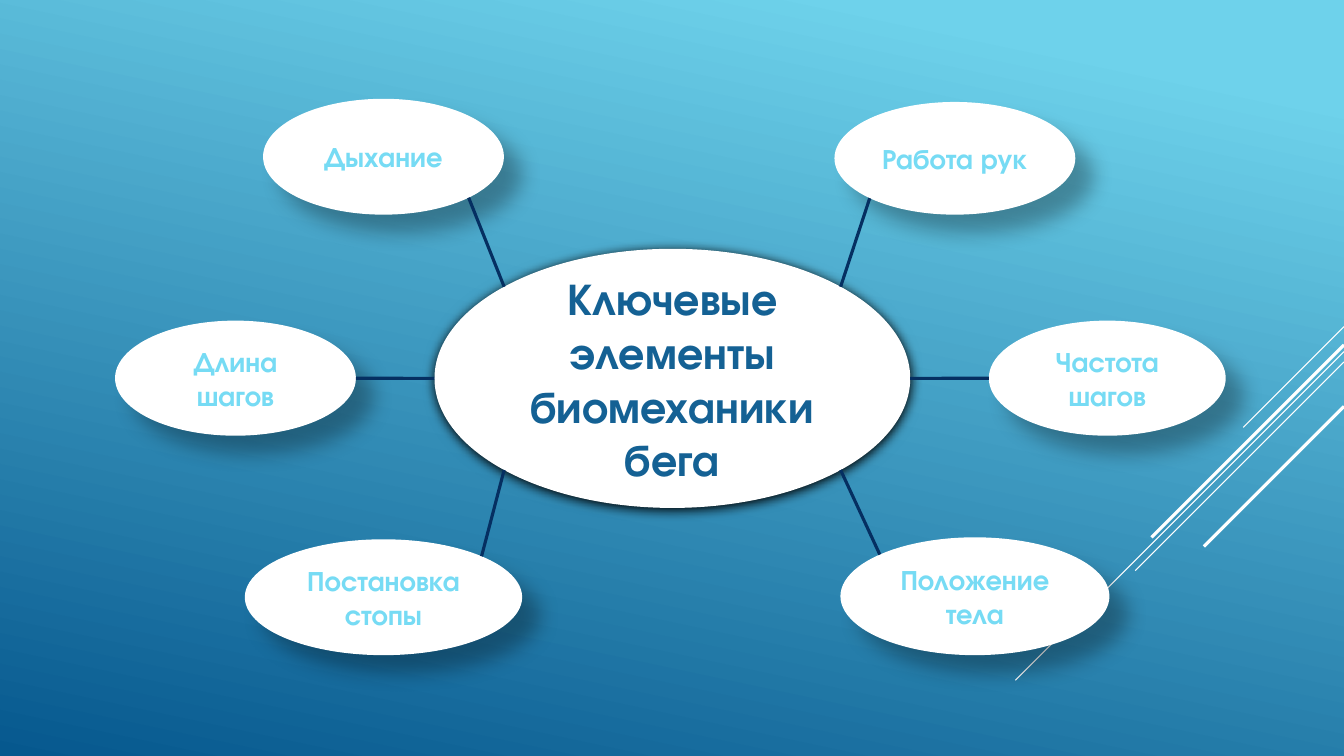
from dataclasses import dataclass
from math import cos, radians, sin

from lxml.etree import SubElement
from pptx import Presentation
from pptx.dml.color import RGBColor
from pptx.enum.shapes import MSO_CONNECTOR, MSO_SHAPE
from pptx.enum.text import MSO_ANCHOR, PP_ALIGN
from pptx.oxml.ns import qn
from pptx.util import Cm, Pt


@dataclass(frozen=True)
class Theme:
    """Colours, font and type sizes of the slide."""
    sky: str = "6ED2EB"
    deep: str = "06588E"
    white: str = "FFFFFF"
    black: str = "000000"
    navy: str = "052F61"
    title: str = "146194"
    label: str = "76DBF4"
    font: str = "TeX Gyre Adventor"
    large: int = 32
    small: int = 20
    thin: float = 0.75
    thick: float = 2.25


@dataclass(frozen=True)
class Style:
    """Type and shadow of one kind of oval."""
    size: int
    color: str
    alpha: int
    blur: float
    dist: float
    angle: int


THEME = Theme()
HUB = Style(THEME.large, THEME.title, 100, 8.5, 1, 90)
NODE = Style(THEME.small, THEME.label, 30, 15, 18, 45)
WIDTH, HEIGHT = 33.87, 19.05

STRIPES = [
    (8.23, 2.54, THEME.thin),
    (8.86, 8.28, THEME.thin),
    (9.12, 5.26, THEME.thin),
    (8.69, 4.85, THEME.thick),
    (10.24, 3.53, THEME.thick),
]
TOPICS = [
    ("Частота шагов", (24.92, 8.08, 5.97, 2.9), 0),
    ("Работа рук", (21.03, 2.57, 6.07, 2.84), -45),
    ("Дыхание", (6.63, 2.49, 6.07, 2.92), -135),
    ("Постановка стопы", (6.17, 13.59, 6.99, 2.92), 135),
    ("Длина шагов", (2.9, 8.08, 6.07, 2.9), 180),
    ("Положение тела", (21.18, 13.54, 6.78, 2.97), 45),
]


def rgb(code):
    """Turn a hex code into a colour."""
    return RGBColor.from_string(code)


def paint(slide):
    """Fill the background with the slanted gradient."""
    fill = slide.background.fill
    fill.gradient()
    fill.gradient_angle = 360 - 102
    stops = [(0.1, THEME.sky), (1, THEME.deep)]
    for stop, (place, code) in zip(fill.gradient_stops, stops):
        stop.position = place
        stop.color.rgb = rgb(code)


def add_line(slide, start, end, color, weight):
    """Draw a straight line without a shadow."""
    line = slide.shapes.add_connector(MSO_CONNECTOR.STRAIGHT, *start, *end)
    line.line.color.rgb = rgb(color)
    line.line.width = Pt(weight)
    SubElement(line._element.spPr, qn("a:effectLst"))


def add_shade(shape, style):
    """Give a shape the soft shadow of its style."""
    shape.shadow.inherit = False
    effects = shape._element.spPr.find(qn("a:effectLst"))
    shade = SubElement(
        effects, qn("a:outerShdw"), blurRad=str(Pt(style.blur)),
        dist=str(Pt(style.dist)), dir=str(style.angle * 60000),
        algn="ctr", rotWithShape="0")
    color = SubElement(shade, qn("a:srgbClr"), val=THEME.black)
    SubElement(color, qn("a:alpha"), val=str(style.alpha * 1000))


def add_oval(slide, text, box, style):
    """Add a white oval with centred bold text."""
    oval = slide.shapes.add_shape(MSO_SHAPE.OVAL, *map(Cm, box))
    oval.fill.solid()
    oval.fill.fore_color.rgb = rgb(THEME.white)
    oval.line.fill.background()
    add_shade(oval, style)
    frame = oval.text_frame
    frame.word_wrap = True
    frame.vertical_anchor = MSO_ANCHOR.MIDDLE
    frame.text = text
    para = frame.paragraphs[0]
    para.alignment = PP_ALIGN.CENTER
    para.font.name = THEME.font
    para.font.size = Pt(style.size)
    para.font.bold = True
    para.font.color.rgb = rgb(style.color)
    return oval


def rim(oval, angle):
    """Find the point on an oval's edge at a clockwise angle."""
    turn = radians(angle)
    return (round(oval.left + oval.width / 2 * (1 + cos(turn))),
            round(oval.top + oval.height / 2 * (1 + sin(turn))))


def main():
    """Build the mind map and save it."""
    deck = Presentation()
    deck.slide_width, deck.slide_height = Cm(WIDTH), Cm(HEIGHT)
    slide = deck.slides.add_slide(deck.slide_layouts[6])
    paint(slide)
    for top, reach, weight in STRIPES:
        start = Cm(WIDTH), Cm(top)
        end = Cm(WIDTH - reach), Cm(top + reach)
        add_line(slide, start, end, THEME.white, weight)
    hub = add_oval(slide, "Ключевые элементы биомеханики бега",
                   (10.95, 6.27, 11.99, 6.53), HUB)
    nodes = [(add_oval(slide, text, box, NODE), angle)
             for text, box, angle in TOPICS]
    for node, angle in nodes:
        add_line(slide, rim(hub, angle), rim(node, angle + 180),
                 THEME.navy, THEME.thick)
    deck.save("out.pptx")


if __name__ == "__main__":
    main()
